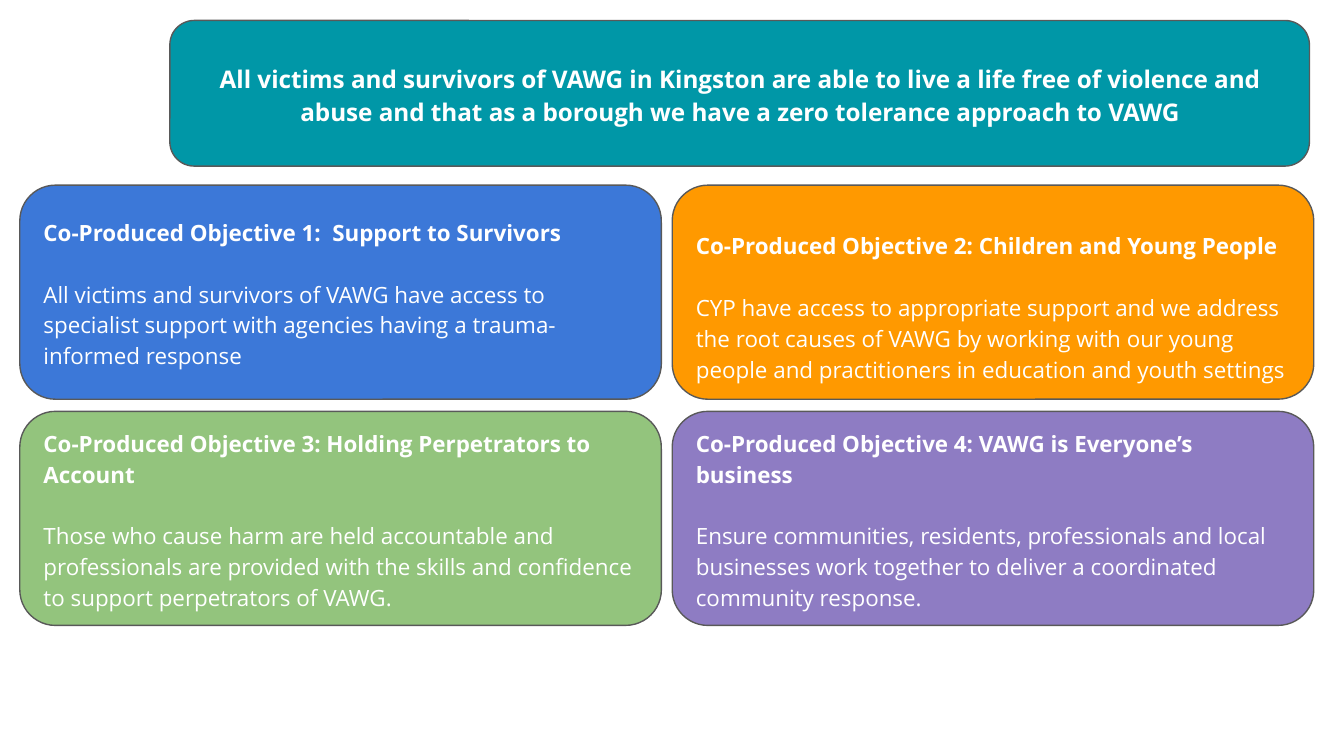
from pptx import Presentation
from pptx.dml.color import RGBColor
from pptx.enum.shapes import MSO_SHAPE
from pptx.enum.text import MSO_ANCHOR, PP_ALIGN
from pptx.util import Pt


def color(hex_value):
    return RGBColor.from_string(hex_value)


def add_panel(left, top, width, height, fill, paragraphs, align, size, top_inset=7.2):
    """Draw a rounded panel; paragraphs holds (text, bold, space before)."""
    panel = slide.shapes.add_shape(
        MSO_SHAPE.ROUNDED_RECTANGLE, Pt(left), Pt(top), Pt(width), Pt(height))
    panel.shadow.inherit = False
    panel.fill.solid()
    panel.fill.fore_color.rgb = color(fill)
    panel.line.color.rgb = color("595959")
    panel.line.width = Pt(0.75)

    frame = panel.text_frame
    frame_format = {
        "word_wrap": True, "vertical_anchor": MSO_ANCHOR.MIDDLE,
        "margin_left": Pt(7.2), "margin_right": Pt(7.2),
        "margin_top": Pt(top_inset), "margin_bottom": Pt(7.2),
    }
    for name, value in frame_format.items():
        setattr(frame, name, value)

    for index, (text, bold, space_before) in enumerate(paragraphs):
        paragraph = frame.add_paragraph() if index else frame.paragraphs[0]
        paragraph.alignment = align
        paragraph.line_spacing = 1.15
        if space_before:
            paragraph.space_before = Pt(space_before)
        run = paragraph.add_run()
        run.text = text
        for name, value in {"name": "Open Sans", "size": Pt(size), "bold": bold}.items():
            setattr(run.font, name, value)
        run.font.color.rgb = color("FFFFFF")


presentation = Presentation()
presentation.slide_width = Pt(720)
presentation.slide_height = Pt(405)
slide = presentation.slides.add_slide(presentation.slide_layouts[6])

# Vision statement
vision = ("All victims and survivors of VAWG in Kingston are able to live a life free of "
          "violence and abuse and that as a borough we have a zero tolerance approach to VAWG")
add_panel(91, 11, 610.5, 78, "0097A7", [(vision, True, 0)], PP_ALIGN.CENTER, 13)

# Objectives: fill, heading, aim, top inset (the second one sits lower)
objectives = [
    ("3C78D8", "Co-Produced Objective 1:  Support to Survivors",
     "All victims and survivors of VAWG have access to specialist support with agencies "
     "having a trauma-informed response", 7.2),
    ("FF9900", "Co-Produced Objective 2: Children and Young People",
     "CYP have access to appropriate support and we address the root causes of VAWG by "
     "working with our young people and practitioners in education and youth settings", 21.8),
    ("93C47D", "Co-Produced Objective 3: Holding Perpetrators to Account",
     "Those who cause harm are held accountable and professionals are provided with the "
     "skills and confidence to support perpetrators of VAWG.", 7.2),
    ("8E7CC3", "Co-Produced Objective 4: VAWG is Everyone’s business",
     "Ensure communities, residents, professionals and local businesses work together to "
     "deliver a coordinated community response.", 7.2),
]

# Two-by-two grid of objectives
grid_left, grid_top = 10.6, 99.2
column_step, row_step = 349.5, 121.2
for index, (fill, heading, aim, top_inset) in enumerate(objectives):
    row, column = divmod(index, 2)
    add_panel(grid_left + column * column_step, grid_top + row * row_step, 343.7, 114.7,
              fill, [(heading, True, 0), (aim, False, 16.5)], PP_ALIGN.LEFT, 12, top_inset)

presentation.save("out.pptx")
